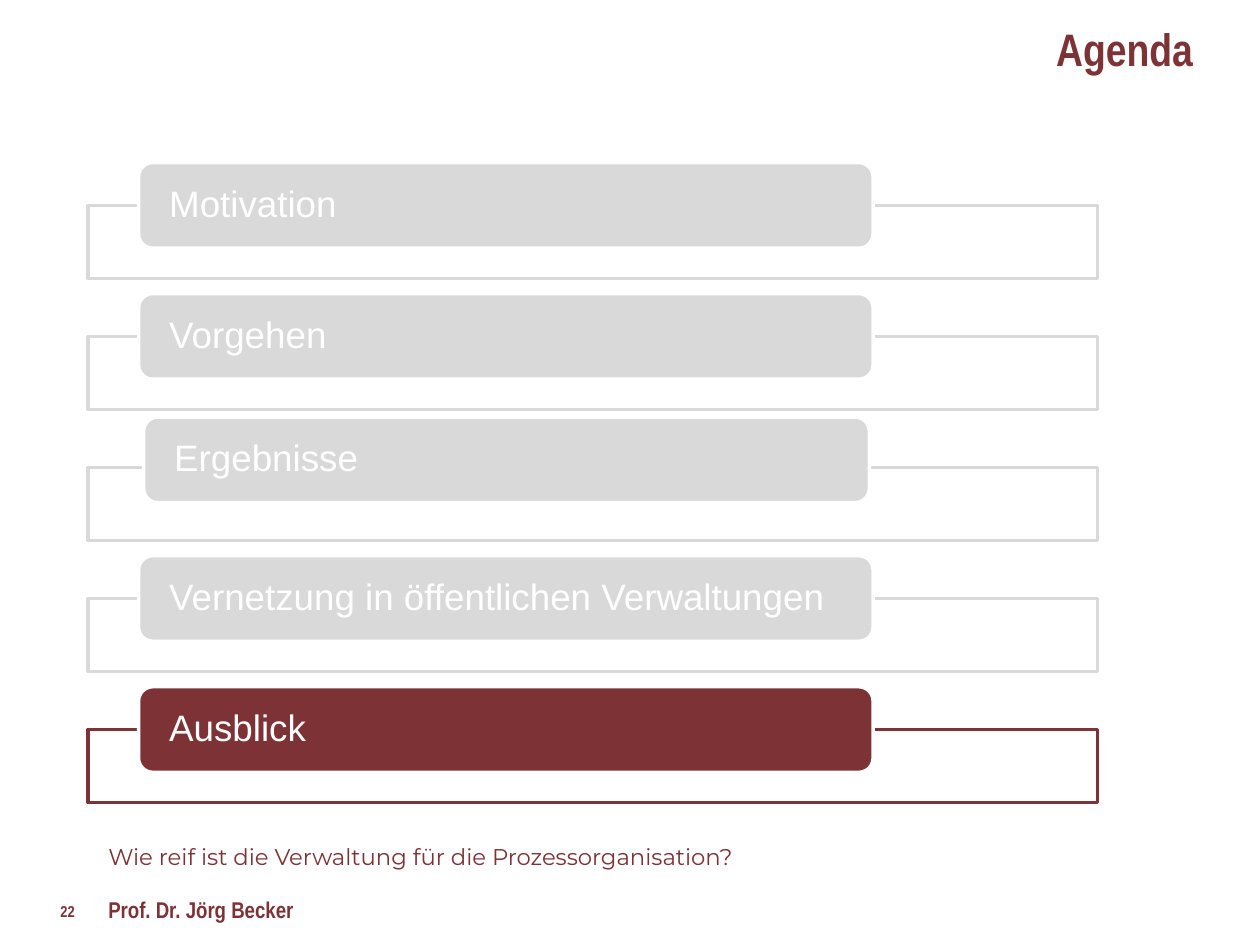
from dataclasses import dataclass

from pptx import Presentation
from pptx import util as u
from pptx.dml.color import RGBColor
from pptx.enum import shapes, text

COLORS = {"accent": "7D3236", "muted": "D9D9D9", "white": "FFFFFF"}
FIRST_TOP = 1.29
ROW_STEP = 1.04


@dataclass
class AgendaItem:
    title: str
    color: str = "muted"
    left: float = 1.1
    width: float = 5.83
    lift: float = 0


@dataclass
class Label:
    words: str
    left: float
    top: float
    width: float
    height: float
    size: float
    insets: tuple = (0.13, 0.07, 0.13, 0.07)
    font: str = "Arial Narrow"
    bold: bool = True
    wrap: bool = True
    align: text.PP_ALIGN = text.PP_ALIGN.LEFT
    anchor: text.MSO_ANCHOR = text.MSO_ANCHOR.TOP


AGENDA = [
    AgendaItem("Motivation"),
    AgendaItem("Vorgehen"),
    AgendaItem("Ergebnisse", left=1.14, width=5.76, lift=0.06),
    AgendaItem("Vernetzung in öffentlichen Verwaltungen"),
    AgendaItem("Ausblick", color="accent"),
]

LABELS = [
    Label("22", 0.31, 7.09, 0.51, 0.28, 9, insets=(0.17, 0.07, 0.13, 0.07),
          wrap=False, anchor=text.MSO_ANCHOR.MIDDLE),
    Label("Wie reif ist die Verwaltung für die Prozessorganisation?",
          0.73, 6.62, 7.42, 0.35, 13, font="Montserrat", bold=False),
    Label("Prof. Dr. Jörg Becker", 0.73, 7.04, 4.54, 0.35, 13),
    Label("Agenda", 8.3, 0.17, 1.2, 0.44, 26, insets=(0.08, 0, 0.03, 0),
          wrap=False, align=text.PP_ALIGN.RIGHT),
]


def rgb(name: str) -> RGBColor:
    return RGBColor.from_string(COLORS[name])


def set_text(box, words: str, insets: tuple, font: str, size: float, color: str,
             bold: bool, align, anchor, wrap: bool):
    frame = box.text_frame
    frame.word_wrap = wrap
    frame.vertical_anchor = anchor
    frame.margin_left, frame.margin_top, frame.margin_right, frame.margin_bottom = map(
        u.Inches, insets)
    para = frame.paragraphs[0]
    para.text = words
    para.alignment = align
    para.font.name = font
    para.font.size = u.Pt(size)
    para.font.bold = bold
    para.font.color.rgb = rgb(color)
    return para


def add_block(page, kind, left: float, top: float, width: float, height: float,
              fill: str, line: str):
    block = page.shapes.add_shape(kind, *map(u.Inches, (left, top, width, height)))
    block.shadow.inherit = False
    block.fill.solid()
    block.fill.fore_color.rgb = rgb(fill)
    block.line.color.rgb = rgb(line)
    block.line.width = u.Pt(2)
    return block


def add_agenda_item(page, item: AgendaItem, top: float) -> None:
    add_block(page, shapes.MSO_SHAPE.RECTANGLE, 0.7, top + 0.34, 8.01, 0.58,
              "white", item.color)
    tab = add_block(page, shapes.MSO_SHAPE.ROUNDED_RECTANGLE, item.left,
                    top - item.lift, item.width, 0.68, item.color, "white")
    para = set_text(tab, item.title, (0.21, 0, 0.21, 0), "Arial", 21, "white", False,
                    text.PP_ALIGN.LEFT, text.MSO_ANCHOR.MIDDLE, True)
    para.line_spacing = 0.9


def add_label(page, label: Label) -> None:
    box = page.shapes.add_textbox(
        *map(u.Inches, (label.left, label.top, label.width, label.height)))
    set_text(box, label.words, label.insets, label.font, label.size, "accent",
             label.bold, label.align, label.anchor, label.wrap)


def main() -> None:
    deck = Presentation()
    deck.slide_width = u.Inches(10)
    deck.slide_height = u.Inches(7.5)
    page = deck.slides.add_slide(deck.slide_layouts[6])
    for label in LABELS:
        add_label(page, label)
    for row, item in enumerate(AGENDA):
        add_agenda_item(page, item, FIRST_TOP + row * ROW_STEP)
    deck.save("out.pptx")


if __name__ == "__main__":
    main()
